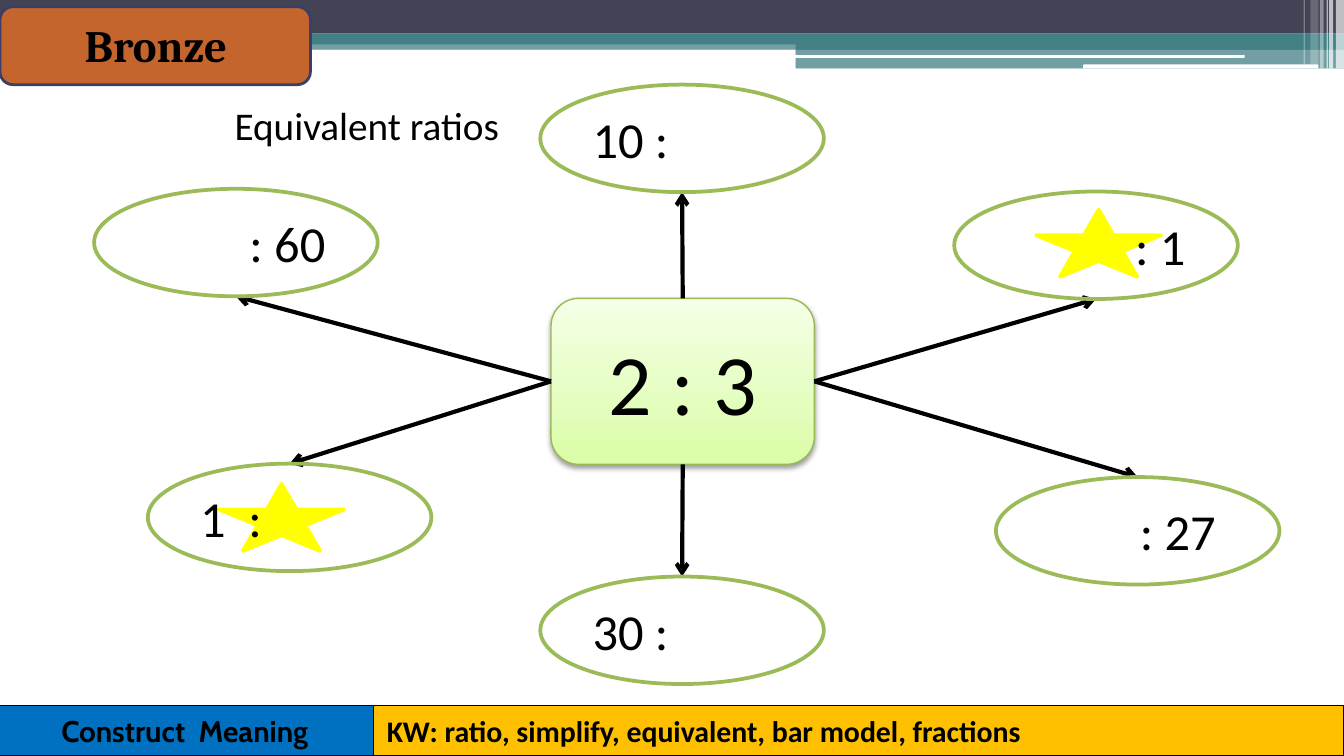
from lxml.etree import SubElement
from pptx import Presentation
from pptx.dml.color import RGBColor
from pptx.enum.shapes import MSO_CONNECTOR, MSO_SHAPE
from pptx.enum.text import MSO_ANCHOR, PP_ALIGN
from pptx.oxml.ns import qn
from pptx.util import Inches, Pt

COLUMNS, ROWS = 100, 56.25
CELL = Inches(0.1)
TEAL, WHITE, BLACK, GREEN, YELLOW = "438086", "FFFFFF", "000000", "9BBB59", "FFFF00"
LEFT, CENTRE, RIGHT = PP_ALIGN.LEFT, PP_ALIGN.CENTER, PP_ALIGN.RIGHT
TIGHT, ROOMY = (0.08, 0.04), (0.1, 0.05)
BUBBLE_WIDTH, BUBBLE_HEIGHT = 21.1, 8
RATIO_BOX = (41, 22.2, 19.6, 12.35)
BOX_TOP, BOX_LEFT, BOX_BOTTOM, BOX_RIGHT = range(4)

STRIPES = [
    (99.4, 0.6, 5.1, 65), (98.9, 0.3, 5.1, 65), (98.7, 0.1, 5.1, 60),
    (98.2, 0.3, 5.1, 40), (97.5, 0.6, 4.8, 20), (97, 0.1, 4.8, 30),
]
BUBBLES = [
    ("10 :", LEFT, 40.2, 6.3, BOX_TOP, WHITE),
    (": 60", RIGHT, 7, 14.05, BOX_LEFT, WHITE),
    ("30 :", LEFT, 40.2, 42.9, BOX_BOTTOM, WHITE),
    (": 1", RIGHT, 71, 14.25, BOX_RIGHT, None),
    ("1  :", LEFT, 11, 34.5, BOX_LEFT, None),
    (": 27 ", RIGHT, 74.1, 35.5, BOX_RIGHT, WHITE),
]


def cells(*counts):
    """Turn grid counts into lengths."""
    return [round(count * CELL) for count in counts]


def paint(color, value):
    """Set a color format from a hex string."""
    color.rgb = RGBColor.from_string(value)


def add_figure(page, kind, place, fill=None, line=None, width=0.75, opacity=100):
    """Add a preset shape with plain fill, outline and no shadow."""
    figure = page.shapes.add_shape(kind, *cells(*place))
    figure.shadow.inherit = False
    if fill:
        figure.fill.solid()
        paint(figure.fill.fore_color, fill)
        if opacity < 100:
            color = figure.fill._xPr.find(qn("a:solidFill"))[0]
            SubElement(color, qn("a:alpha"), val=str(opacity * 1000))
    else:
        figure.fill.background()
    if line:
        paint(figure.line.color, line)
        figure.line.width = Pt(width)
    else:
        figure.line.fill.background()
    return figure


def write(figure, text, size, font="Calibri", align=CENTRE, bold=False,
          anchor=MSO_ANCHOR.MIDDLE, insets=TIGHT):
    """Put one formatted paragraph into a shape or text box."""
    frame = figure.text_frame
    frame.text = text
    frame.word_wrap = True
    frame.vertical_anchor = anchor
    frame.margin_left = frame.margin_right = Inches(insets[0])
    frame.margin_top = frame.margin_bottom = Inches(insets[1])
    para = frame.paragraphs[0]
    para.alignment = align
    span = para.runs[0]
    span.font.name, span.font.size, span.font.bold = font, Pt(size), bold
    paint(span.font.color, BLACK)


def add_label(page, place, text, size, **style):
    """Add a text box with one paragraph."""
    write(page.shapes.add_textbox(*cells(*place)), text, size, **style)


def add_stripes(page):
    """Draw the pale bands under the header and its corner stripes."""
    for left, width, height, opacity in STRIPES:
        add_figure(page, MSO_SHAPE.RECTANGLE, (left, 0, width, height), WHITE, opacity=opacity)


def add_header(page):
    """Draw the layered banner along the top edge."""
    pale_bar, pale_block = (0, 3, COLUMNS, 0.7), (59.2, 3.6, 40.8, 1.5)
    for place in (pale_bar, pale_block):
        add_figure(page, MSO_SHAPE.RECTANGLE, place, TEAL, opacity=50)
    add_stripes(page)
    for place, fill, opacity in [
        (pale_bar, TEAL, 50), ((0, 0, COLUMNS, 2.5), "424456", 100),
        ((0, 2.5, COLUMNS, 0.8), TEAL, 100), ((59.2, 3, 40.8, 0.7), TEAL, 100),
        (pale_block, TEAL, 50),
    ]:
        add_figure(page, MSO_SHAPE.RECTANGLE, place, fill, opacity=opacity)
    for place in [(59.1, 4.1, 33.5, 0.2), (80.6, 4.8, 17.5, 0.3)]:
        add_figure(page, MSO_SHAPE.ROUNDED_RECTANGLE, place, WHITE)
    add_stripes(page)


def add_ratio_box(page):
    """Draw the central ratio with its gradient and soft shadow."""
    box = add_figure(page, MSO_SHAPE.ROUNDED_RECTANGLE, RATIO_BOX, line="98B955")
    box.fill.gradient()
    box.fill.gradient_angle = 90
    for stop, value, position in zip(box.fill.gradient_stops, ("DAFDA7", "F5FFE7"), (0, 1)):
        paint(stop.color, value)
        stop.position = position
    effects = box._element.spPr.find(qn("a:effectLst"))
    shadow = SubElement(effects, qn("a:outerShdw"), blurRad=str(Pt(3.1)), dist=str(Pt(1.6)),
                        dir="5400000", rotWithShape="0")
    color = SubElement(shadow, qn("a:srgbClr"), val=BLACK)
    SubElement(color, qn("a:alpha"), val="38000")
    write(box, "2 : 3", 46)
    return box


def add_arrow(page, box, side, end):
    """Join a side of the box to a point with an open arrowhead."""
    arrow = page.shapes.add_connector(MSO_CONNECTOR.STRAIGHT, 0, 0, *cells(*end))
    arrow.begin_connect(box, side)
    paint(arrow.line.color, BLACK)
    arrow.line.width = Pt(2.25)
    SubElement(arrow.line._get_or_add_ln(), qn("a:tailEnd"), type="arrow")
    SubElement(arrow._element.spPr, qn("a:effectLst"))


def add_bubble(page, box, text, align, left, top, side, fill):
    """Add one ratio bubble and the arrow that leads to it."""
    touch = top + BUBBLE_HEIGHT if top < RATIO_BOX[1] else top
    add_arrow(page, box, side, (left + BUBBLE_WIDTH / 2, touch))
    place = (left, top, BUBBLE_WIDTH, BUBBLE_HEIGHT)
    bubble = add_figure(page, MSO_SHAPE.OVAL, place, fill, GREEN, 2)
    write(bubble, text, 27, align=align)


def add_footer(page):
    """Draw the two captioned bars along the bottom edge."""
    for left, right, fill, text, font, align in [
        (-0.3, 27.8, "0070C0", "Construct  Meaning", "Cabin", CENTRE),
        (27.8, COLUMNS, "FFC000", "KW: ratio, simplify, equivalent, bar model, fractions",
         "Calibri", LEFT),
    ]:
        place = (left, 52.5, right - left, ROWS - 52.5)
        bar = add_figure(page, MSO_SHAPE.RECTANGLE, place, fill, BLACK)
        write(bar, text, 16, font=font, align=align, bold=True,
              anchor=MSO_ANCHOR.TOP, insets=ROOMY)


def main():
    """Build and save the slide."""
    deck = Presentation()
    deck.slide_width, deck.slide_height = cells(COLUMNS, ROWS)
    page = deck.slides.add_slide(deck.slide_layouts[6])
    add_header(page)
    for left, top in [(16.3, 36), (77.1, 15.6)]:
        add_figure(page, MSO_SHAPE.STAR_5_POINT, (left, top, 9.3, 5), YELLOW, YELLOW, 2)
    add_label(page, (-17.7, 4.6, 90, 9.4), "Equivalent ratios", 21)
    box = add_ratio_box(page)
    for bubble in BUBBLES:
        add_bubble(page, box, *bubble)
    add_figure(page, MSO_SHAPE.ROUNDED_RECTANGLE, (0, 0.5, 23.1, 5.8), "C4652D", "3D3E66", 1.5)
    add_label(page, (1.4, 0.8, 20.4, 5), "Bronze", 24, font="Cambria", bold=True,
              anchor=MSO_ANCHOR.TOP, insets=ROOMY)
    add_footer(page)
    deck.save("out.pptx")


if __name__ == "__main__":
    main()
